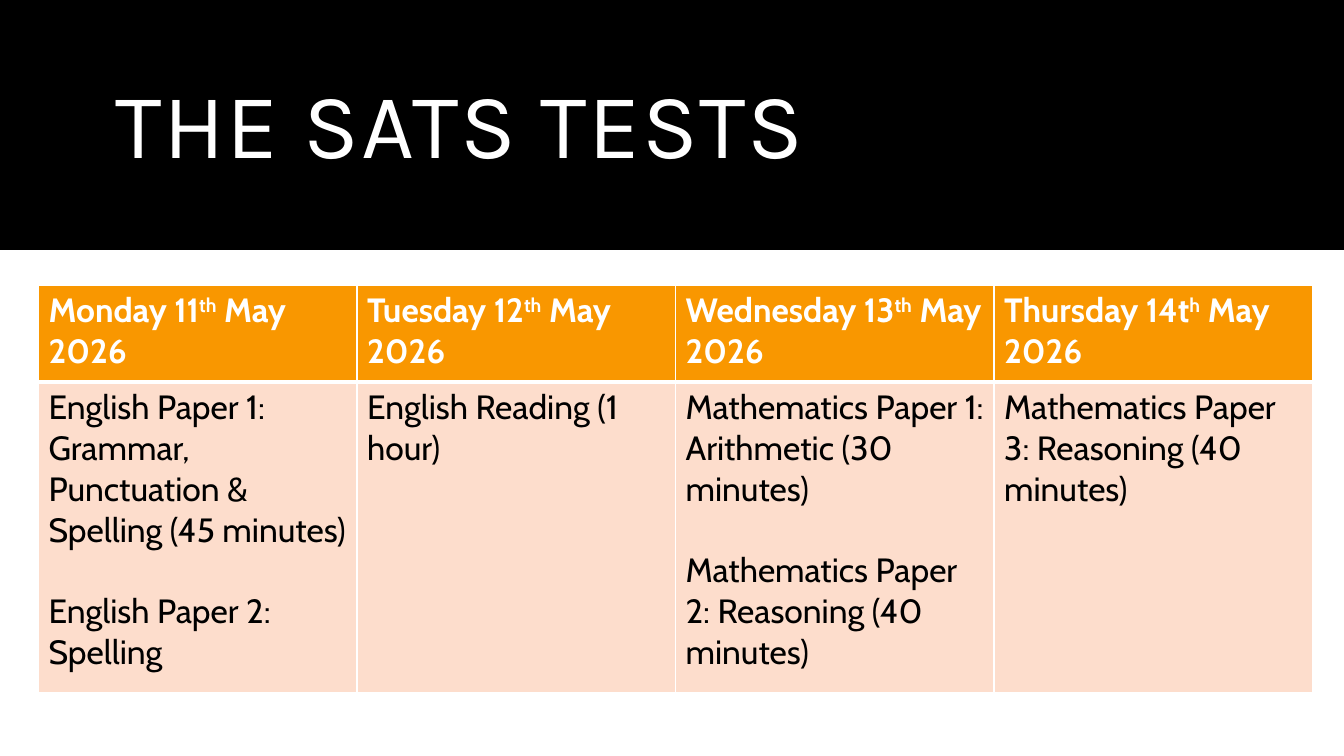
import pptx
import pptx.dml.color
import pptx.enum.shapes
import pptx.enum.text
import pptx.oxml
import pptx.oxml.ns
import pptx.util

Cm, Pt = pptx.util.Cm, pptx.util.Pt
WHITE, BLACK, ORANGE, PEACH = "FFFFFF", "000000", "F99700", "FDDDCC"

DAYS = [
    (("Monday 11", "th", " May 2026"),
     ["English Paper 1: Grammar, Punctuation & Spelling (45 minutes)",
      "English Paper 2: Spelling"]),
    (("Tuesday 12", "th", " May 2026"),
     ["English Reading (1 hour)"]),
    (("Wednesday 13", "th", " May 2026"),
     ["Mathematics Paper 1: Arithmetic (30 minutes)",
      "Mathematics Paper 2: Reasoning (40 minutes)"]),
    (("Thursday 14t", "h", " May 2026"),
     ["Mathematics Paper 3: Reasoning (40 minutes)"]),
]


def color(value):
    """Turn a hex string into a colour."""
    return pptx.dml.color.RGBColor.from_string(value)


def add_run(p, text, font, size, fill, bold=False, **attributes):
    """Add a styled run, with extra run attributes such as spc or baseline."""
    r = p.add_run()
    r.text = text
    r.font.name = font
    r.font.size = Pt(size)
    r.font.bold = bold
    r.font.color.rgb = color(fill)
    for name, value in attributes.items():
        r._r.get_or_add_rPr().set(name, value)


def style_cell(cell, fill, top, bottom):
    """Fill a cell and give it white borders; top and bottom are in points."""
    cell.fill.solid()
    cell.fill.fore_color.rgb = color(fill)
    tcPr = cell._tc.get_or_add_tcPr()
    widths = {"lnL": 1, "lnR": 1, "lnT": top, "lnB": bottom}
    for i, (tag, width) in enumerate(widths.items()):
        tcPr.insert(i, pptx.oxml.parse_xml(
            f'<a:{tag} {pptx.oxml.ns.nsdecls("a")} w="{Pt(width)}"><a:solidFill>'
            f'<a:srgbClr val="{WHITE}"/></a:solidFill></a:{tag}>'))


def add_banner(s, left, top, width, height):
    """Draw the black band with the slide title."""
    sp = s.shapes.add_shape(
        pptx.enum.shapes.MSO_SHAPE.RECTANGLE, left, top, width, height)
    sp.shadow.inherit = False
    sp.fill.solid()
    sp.fill.fore_color.rgb = color(BLACK)
    sp.line.fill.background()

    title = s.shapes.add_textbox(
        left + Cm(2.67), top + Cm(0.89), width - Cm(5.35), height - Cm(1.58))
    tf = title.text_frame
    tf.word_wrap = True
    tf.vertical_anchor = pptx.enum.text.MSO_ANCHOR.MIDDLE
    p = tf.paragraphs[0]
    p.line_spacing = 0.9
    p.space_after = Pt(7)
    add_run(p, "THE SATS TESTS", "Karla", 66, WHITE, spc="120")


def add_timetable(s, left, top, width, header_height, body_height):
    """Draw the table with one column per test day."""
    table = s.shapes.add_table(
        2, len(DAYS), left, top, width, header_height + body_height).table
    table.rows[0].height = header_height
    table.rows[1].height = body_height
    for col, (date, papers) in enumerate(DAYS):
        header, body = table.cell(0, col), table.cell(1, col)
        style_cell(header, ORANGE, 1, 3)
        style_cell(body, PEACH, 3, 1)
        p = header.text_frame.paragraphs[0]
        for text, baseline in zip(date, ("0", "30000", "0")):
            add_run(p, text, "Cabin", 24, WHITE, True, baseline=baseline)
        tf = body.text_frame
        for i, paper in enumerate(papers):
            p = tf.add_paragraph() if i else tf.paragraphs[0]
            p.space_before = Pt(29 if i else 0)
            add_run(p, paper, "Cabin", 24, BLACK)


def main():
    """Build the slide and save it."""
    prs = pptx.Presentation()
    prs.slide_width, prs.slide_height = Cm(33.87), Cm(19.05)
    s = prs.slides.add_slide(prs.slide_layouts[6])
    add_banner(s, Cm(0), Cm(0), prs.slide_width, Cm(6.3))
    add_timetable(s, Cm(0.97), Cm(7.19), Cm(32.11), Cm(2.44), Cm(7.82))
    prs.save("out.pptx")


if __name__ == "__main__":
    main()
